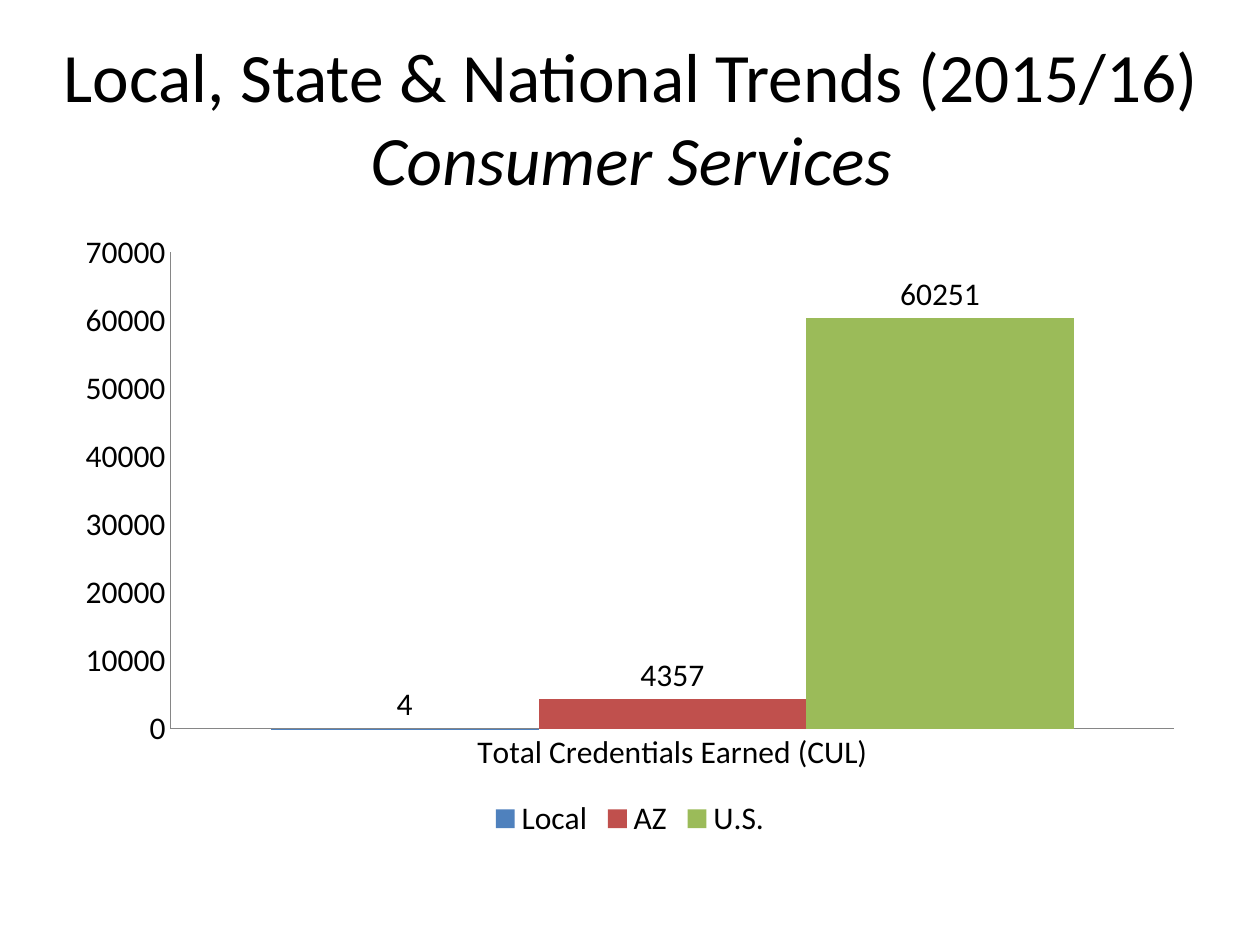
from typing import NamedTuple

from pptx import Presentation
from pptx.chart.data import CategoryChartData as ChartData
from pptx.dml.color import RGBColor as Rgb
from pptx.enum.chart import XL_CHART_TYPE as Kind
from pptx.enum.chart import XL_LABEL_POSITION as Spot
from pptx.enum.chart import XL_LEGEND_POSITION as Side
from pptx.enum.chart import XL_TICK_MARK as Tick
from pptx.enum.text import MSO_ANCHOR as Anchor
from pptx.enum.text import MSO_AUTO_SIZE as Fit
from pptx.enum.text import PP_ALIGN as Align
from pptx.util import Pt

FONT = "Calibri"
COLORS = {
    "text": "000000",
    "axis": "868686",
    "blue": "4F81BD",
    "red": "C0504D",
    "green": "9BBB59",
}


class Region(NamedTuple):
    name: str
    total: int
    color: str


REGIONS = [
    Region("Local", 4, "blue"),
    Region("AZ", 4357, "red"),
    Region("U.S.", 60251, "green"),
]


def tint(key: str) -> Rgb:
    return Rgb.from_string(COLORS[key])


def style(font, size: float) -> None:
    font.name = FONT
    font.size = Pt(size)
    font.color.rgb = tint("text")


def add_title(slide) -> None:
    title = slide.shapes.title
    title.left, title.top = Pt(6.5), Pt(21.6)
    title.width, title.height = Pt(708.5), Pt(90)
    frame = title.text_frame
    frame.text = "Local, State & National Trends (2015/16)\vConsumer Services"
    frame.word_wrap = True
    frame.auto_size = Fit.NONE
    frame.vertical_anchor = Anchor.MIDDLE
    para = frame.paragraphs[0]
    para.alignment = Align.CENTER
    for run in para.runs:
        style(run.font, 39.6)
    para.runs[-1].font.italic = True


def style_axis(axis) -> None:
    axis.has_major_gridlines = False
    axis.major_tick_mark = axis.minor_tick_mark = Tick.NONE
    axis.format.line.color.rgb = tint("axis")
    axis.format.line.width = Pt(0.75)
    style(axis.tick_labels.font, 18)


def style_bars(series, region: Region) -> None:
    series.invert_if_negative = False
    series.format.fill.solid()
    series.format.fill.fore_color.rgb = tint(region.color)
    labels = series.data_labels
    labels.show_value = True
    labels.number_format = "0"
    labels.number_format_is_linked = False
    labels.position = Spot.OUTSIDE_END
    style(labels.font, 18)


def add_chart(slide, regions: list[Region]) -> None:
    data = ChartData(number_format="0")
    data.categories = ["Total Credentials Earned (CUL)"]
    for region in regions:
        data.add_series(region.name, [region.total])
    chart = slide.shapes.add_chart(
        Kind.COLUMN_CLUSTERED, Pt(36), Pt(126), Pt(648), Pt(356.4), data
    ).chart
    style(chart.font, 18)
    chart.has_title = False
    chart.has_legend = True
    chart.legend.position = Side.BOTTOM
    chart.legend.include_in_layout = False
    style(chart.legend.font, 18)

    style_axis(chart.category_axis)
    style_axis(chart.value_axis)
    scale = chart.value_axis
    scale.minimum_scale, scale.maximum_scale = 0, 70000
    scale.major_unit = 10000

    plot = chart.plots[0]
    plot.gap_width = 75
    plot.overlap = 0
    plot.vary_by_categories = False
    for series, region in zip(plot.series, regions):
        style_bars(series, region)


def main() -> None:
    deck = Presentation()
    deck.slide_width, deck.slide_height = Pt(720), Pt(540)
    slide = deck.slides.add_slide(deck.slide_layouts[5])
    add_title(slide)
    add_chart(slide, REGIONS)
    deck.save("out.pptx")


if __name__ == "__main__":
    main()
